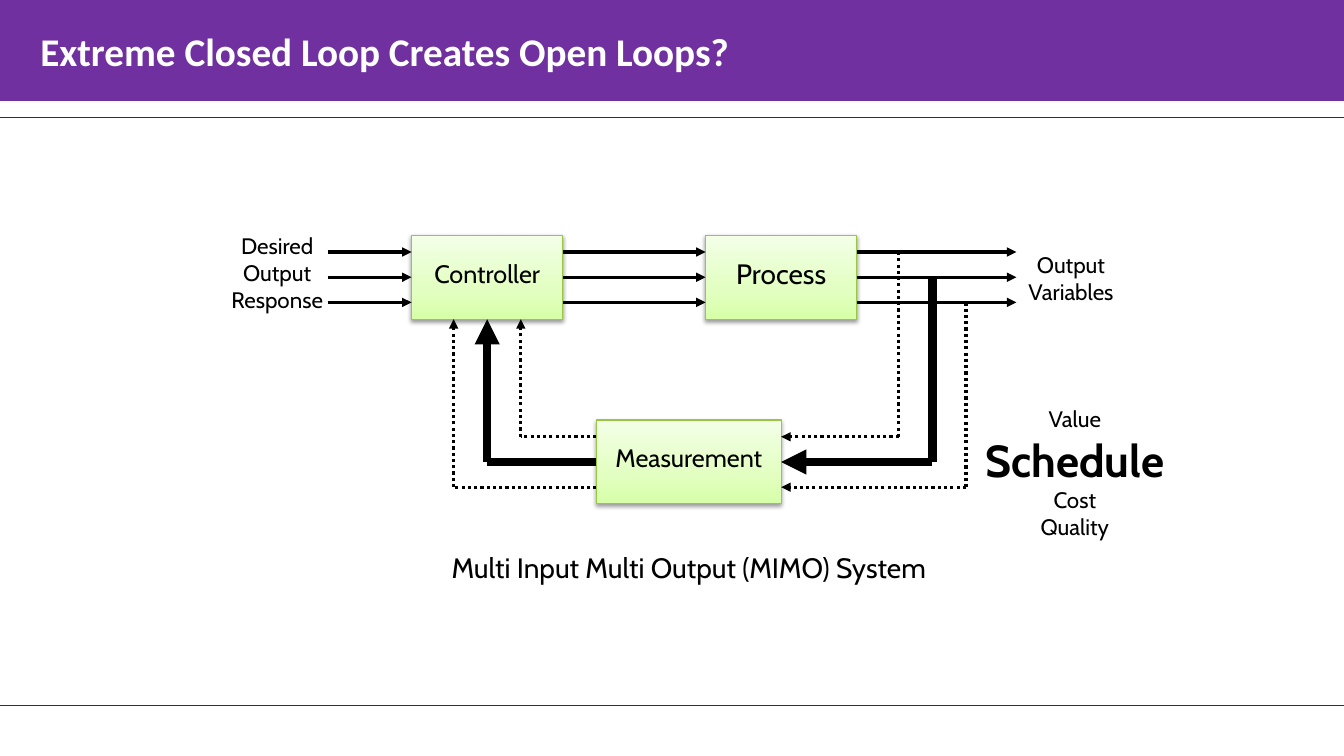
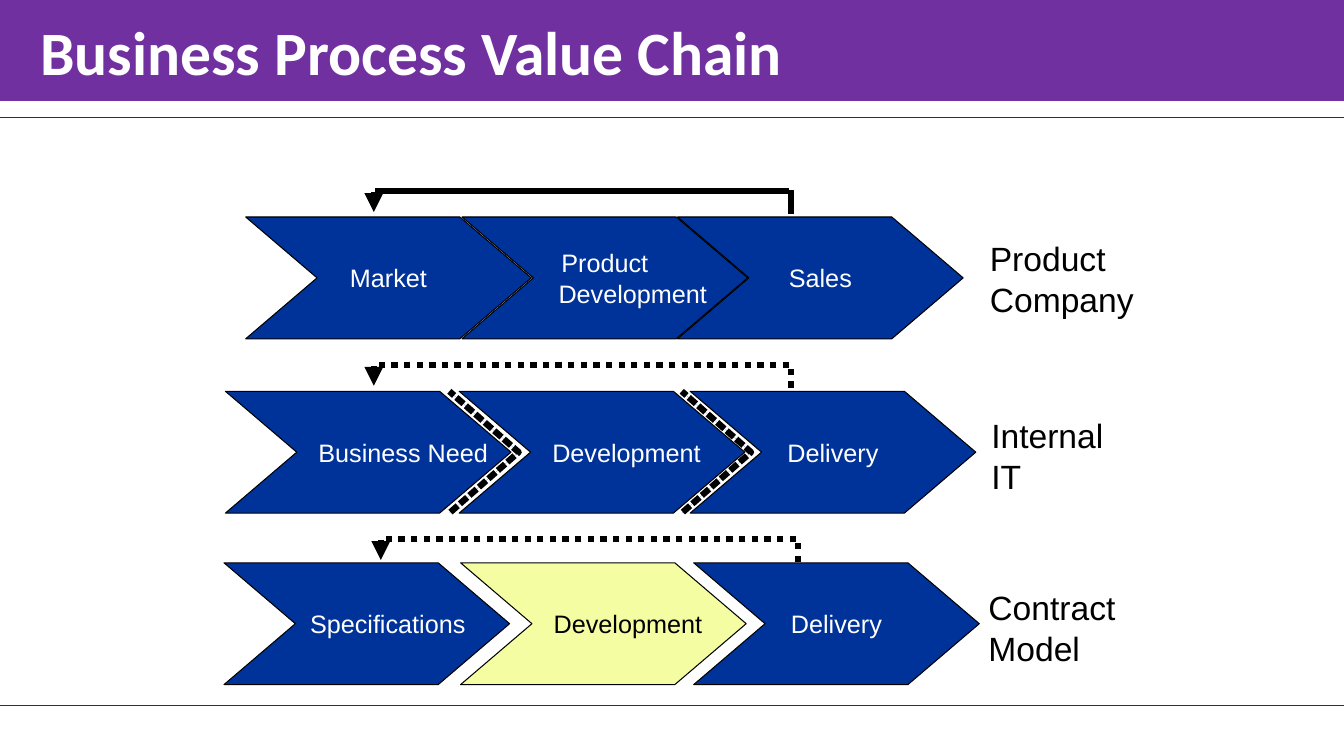
"""Build two slides: a multi-loop control diagram and three business value chains."""
from copy import deepcopy

from pptx import Presentation
from pptx.dml.color import RGBColor
from pptx.enum.dml import MSO_LINE
from pptx.enum.shapes import MSO_CONNECTOR, MSO_SHAPE
from pptx.enum.text import MSO_ANCHOR, MSO_AUTO_SIZE, PP_ALIGN
from pptx.oxml import parse_xml
from pptx.oxml.ns import nsdecls, qn
from pptx.util import Pt

WIDTH, HEIGHT = 960, 540
PURPLE, NAVY, LIME = "7030A0", "003399", "F4FDA1"
BLACK, WHITE, LEAF = "000000", "FFFFFF", "98C746"
GREEN_STOPS = [(0, "D6FFA8"), (0.35, "E2FFC1"), (1, "F3FFE7")]
TITLE_FRAME = {
    "margin_left": Pt(28.8),
    "margin_right": Pt(7.2),
    "margin_top": Pt(3.6),
    "margin_bottom": Pt(3.6),
    "vertical_anchor": MSO_ANCHOR.MIDDLE,
    "auto_size": MSO_AUTO_SIZE.NONE,
    "word_wrap": True,
}
BLOCK_FRAME = {
    "vertical_anchor": MSO_ANCHOR.MIDDLE,
    "margin_bottom": Pt(9.6),
    "word_wrap": True,
}
CHEVRON_FRAME = {"vertical_anchor": MSO_ANCHOR.MIDDLE, "word_wrap": False}
LABEL_FRAME = {"vertical_anchor": MSO_ANCHOR.TOP, "word_wrap": True}

paint = RGBColor.from_string


def write(frame, lines, settings, font, size, color=BLACK, align=PP_ALIGN.CENTER, bold=False):
    for name, value in settings.items():
        setattr(frame, name, value)
    look = {"name": font, "size": Pt(size), "bold": bold}
    for index, line in enumerate(lines):
        paragraph = frame.add_paragraph() if index else frame.paragraphs[0]
        paragraph.alignment = align
        run = paragraph.add_run()
        run.text = line
        for name, value in look.items():
            setattr(run.font, name, value)
        run.font.color.rgb = paint(color)


def connect(slide, start, end, weight, color=BLACK, dotted=False, arrow=False):
    ends = [Pt(value) for value in (*start, *end)]
    link = slide.shapes.add_connector(MSO_CONNECTOR.STRAIGHT, *ends)
    link.line.color.rgb = paint(color)
    link.line.width = Pt(weight)
    if dotted:
        link.line.dash_style = MSO_LINE.ROUND_DOT
    if arrow:
        link.line._get_or_add_ln().append(
            parse_xml(f'<a:tailEnd {nsdecls("a")} type="triangle"/>'))
    link.element.spPr.append(parse_xml(f'<a:effectLst {nsdecls("a")}/>'))


deck = Presentation()
deck.slide_width, deck.slide_height = Pt(WIDTH), Pt(HEIGHT)

for heading, size in [("Extreme Closed Loop Creates Open Loops?", 28),
                      ("Business Process Value Chain", 44)]:
    slide = deck.slides.add_slide(deck.slide_layouts[5])
    title = slide.shapes.title
    band = {"left": 0, "top": 0, "width": Pt(WIDTH), "height": Pt(72)}
    for name, value in band.items():
        setattr(title, name, value)
    title.fill.solid()
    title.fill.fore_color.rgb = paint(PURPLE)
    write(title.text_frame, [heading], TITLE_FRAME, "Calibri", size, WHITE, PP_ALIGN.LEFT, True)
    for rule_y in (83.5, 504):
        connect(slide, (0, rule_y), (WIDTH, rule_y), 0.5, NAVY)

control, chains = deck.slides

BLOCK_TOP, BLOCK_HEIGHT = 168, 60
CONTROLLER_LEFT, PROCESS_LEFT, BLOCK_WIDTH = 294, 504, 108
MEASURE_LEFT, MEASURE_TOP, MEASURE_WIDTH = 426, 300, 132
for name, left, top, width, size in [
    ("Controller", CONTROLLER_LEFT, BLOCK_TOP, BLOCK_WIDTH, 18),
    ("Process", PROCESS_LEFT, BLOCK_TOP, BLOCK_WIDTH, 20),
    ("Measurement", MEASURE_LEFT, MEASURE_TOP, MEASURE_WIDTH, 18),
]:
    block = control.shapes.add_shape(
        MSO_SHAPE.RECTANGLE, Pt(left), Pt(top), Pt(width), Pt(BLOCK_HEIGHT))
    block.fill.gradient()
    block.fill.gradient_angle = 90
    stop_list = block.element.spPr.find(".//" + qn("a:gsLst"))
    stop_list.insert(1, deepcopy(stop_list[0]))
    for stop, (position, shade) in zip(block.fill.gradient_stops, GREEN_STOPS):
        stop.position = position
        stop.color.rgb = paint(shade)
    block.line.color.rgb = paint(LEAF)
    block.line.width = Pt(0.75)
    block.shadow.inherit = False
    block.element.spPr.find(qn("a:effectLst")).append(parse_xml(
        f'<a:outerShdw {nsdecls("a")} blurRad="{Pt(3.1)}" dist="{Pt(1.6)}" dir="5400000" '
        f'rotWithShape="0"><a:srgbClr val="{BLACK}"><a:alpha val="38000"/></a:srgbClr>'
        '</a:outerShdw>'))
    write(block.text_frame, [name], BLOCK_FRAME, "Cabin", size)

measure_right = MEASURE_LEFT + MEASURE_WIDTH
for index, (weight, dotted) in enumerate([(2.25, True), (6, False), (2.25, True)]):
    signal_y = 180 + 18 * index
    for start_x, end_x in [(234, CONTROLLER_LEFT),
                           (CONTROLLER_LEFT + BLOCK_WIDTH, PROCESS_LEFT),
                           (PROCESS_LEFT + BLOCK_WIDTH, 726)]:
        connect(control, (start_x, signal_y), (end_x, signal_y), 2.25, arrow=True)
    feedback_y = 312 + 18 * index
    tap_x, return_x = 642 + 24 * index, 372 - 24 * index
    for start, end, arrow in [
        ((tap_x, signal_y), (tap_x, feedback_y), False),
        ((tap_x, feedback_y), (measure_right, feedback_y), True),
        ((MEASURE_LEFT, feedback_y), (return_x, feedback_y), False),
        ((return_x, feedback_y), (return_x, BLOCK_TOP + BLOCK_HEIGHT), True),
    ]:
        connect(control, start, end, weight, dotted=dotted, arrow=arrow)

CENTER, LEFT = PP_ALIGN.CENTER, PP_ALIGN.LEFT
for slide, lines, box, font, size, align in [
    (control, ["Desired Output Response"], (156, 162.5, 84, 65.5), "Cabin", 16, CENTER),
    (control, ["Output Variables"], (726, 176, 78, 46), "Cabin", 16, CENTER),
    (control, ["Multi Input Multi Output (MIMO) System"], (270, 390, 444, 32), "Cabin", 20, CENTER),
    (control, ["Value", "Schedule", "Cost", "Quality"], (674.5, 286, 186.5, 104), "Cabin", 16, CENTER),
    (chains, ["Product Company"], (700, 166.5, 124, 65.5), "Arial", 24, LEFT),
    (chains, ["Internal IT"], (701, 293, 117, 65.5), "Arial", 24, LEFT),
    (chains, ["Contract Model"], (699, 416, 117, 65.5), "Arial", 24, LEFT),
]:
    label = slide.shapes.add_textbox(*[Pt(value) for value in box])
    write(label.text_frame, lines, LABEL_FRAME, font, size, align=align)
    for paragraph in label.text_frame.paragraphs:
        if paragraph.text == "Schedule":
            paragraph.runs[0].font.size = Pt(32)
            paragraph.runs[0].font.bold = True

STEP_WIDTH, STEP_HEIGHT = 204, 87
for top, loop_y, loop_right, dotted, steps in [
    (155, 136.5, 565, False, [
        (175.5, NAVY, [("Market", 0)]),
        (330, NAVY, [("Product", 0), ("Development", 40)]),
        (484, NAVY, [("Sales", 0)])]),
    (279.5, 260.5, 565, True, [
        (161, NAVY, [("Business Need", 50)]),
        (328, NAVY, [("Development", 35)]),
        (493, NAVY, [("Delivery", 0)])]),
    (402, 385, 570, True, [
        (160, NAVY, [("Specifications", 30)]),
        (329, LIME, [("Development", 35)]),
        (495.5, NAVY, [("Delivery", 0)])]),
]:
    for left, fill, lines in steps:
        step = chains.shapes.add_shape(
            MSO_SHAPE.CHEVRON, Pt(left), Pt(top), Pt(STEP_WIDTH), Pt(STEP_HEIGHT))
        step.adjustments[0] = 0.586
        step.shadow.inherit = False
        step.fill.solid()
        step.fill.fore_color.rgb = paint(fill)
        step.line.color.rgb = paint(BLACK)
        step.line.width = Pt(0.75)
        write(step.text_frame, [text for text, indent in lines], CHEVRON_FRAME, "Arial", 18,
              BLACK if fill == LIME else WHITE)
        for paragraph, (text, indent) in zip(step.text_frame.paragraphs, lines):
            if indent:
                properties = paragraph._p.get_or_add_pPr()
                properties.set("marL", str(Pt(indent)))
                properties.set("indent", "0")
    loop_left = loop_right - 298
    for start, end, arrow in [
        ((loop_right, loop_y + 16.5), (loop_right, loop_y - 0.5), False),
        ((loop_right - 1.5, loop_y), (loop_left + 1, loop_y), False),
        ((loop_left, loop_y + 1), (loop_left, loop_y + 15), True),
    ]:
        connect(chains, start, end, 4.5, dotted=dotted, arrow=arrow)

for left in (321, 487):
    barrier = chains.shapes.add_shape(
        MSO_SHAPE.CHEVRON, Pt(left), Pt(279.5), Pt(49.5), Pt(STEP_HEIGHT))
    barrier.adjustments[0] = 1
    barrier.shadow.inherit = False
    barrier.fill.solid()
    barrier.fill.fore_color.rgb = paint(NAVY)
    barrier.line.color.rgb = paint(BLACK)
    barrier.line.width = Pt(4.5)
    barrier.line.dash_style = MSO_LINE.ROUND_DOT

deck.save("out.pptx")
